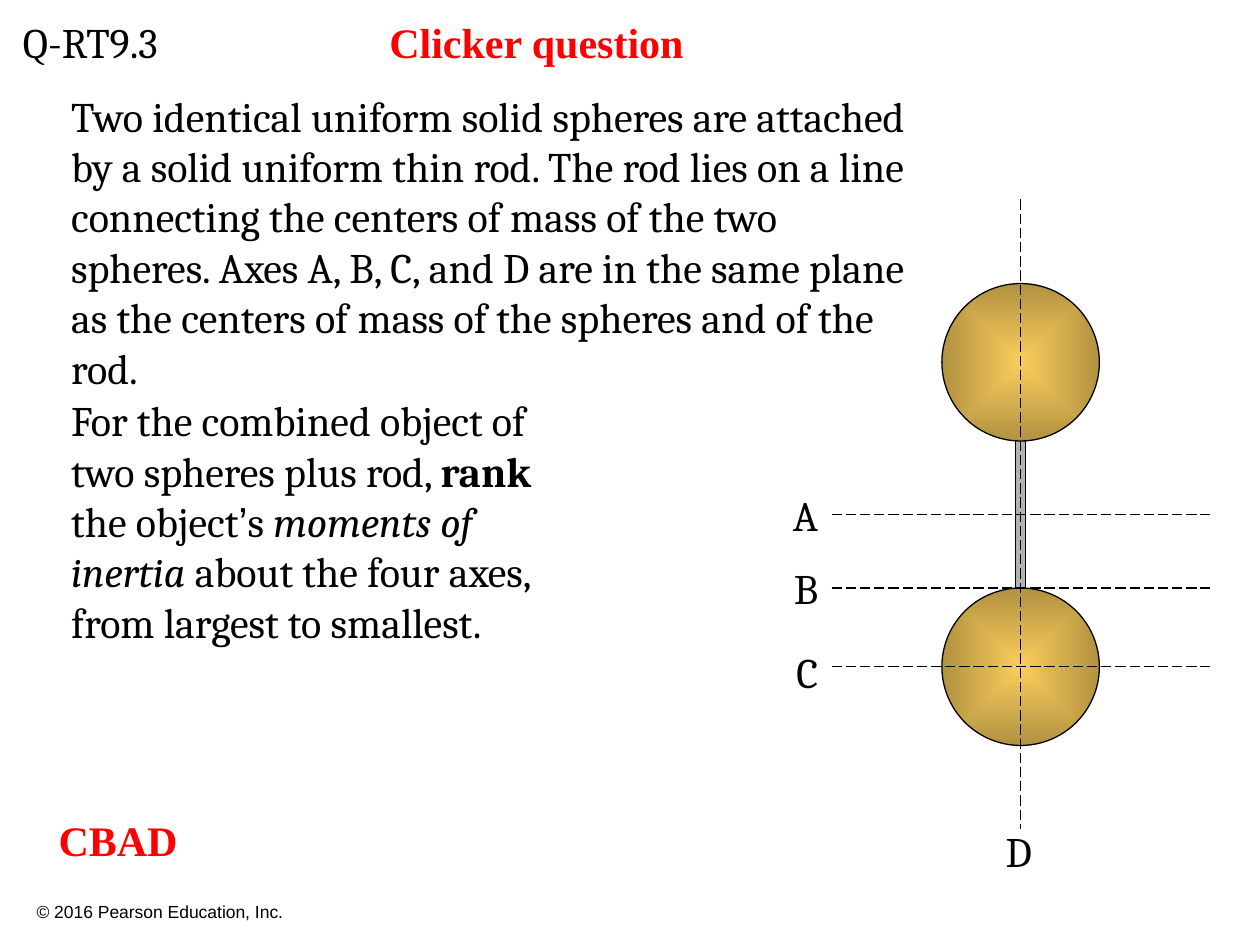
from lxml import etree
from pptx import Presentation
from pptx.dml.color import RGBColor
from pptx.enum.dml import MSO_LINE
from pptx.enum.shapes import MSO_CONNECTOR, MSO_SHAPE
from pptx.enum.text import MSO_AUTO_SIZE, PP_ALIGN
from pptx.oxml import parse_xml
from pptx.oxml.ns import nsdecls, qn
from pptx.util import Inches, Pt

OVAL, RECT = MSO_SHAPE.OVAL, MSO_SHAPE.RECTANGLE
STRAIGHT, LONG_DASH = MSO_CONNECTOR.STRAIGHT, MSO_LINE.LONG_DASH
LEFT, RIGHT = PP_ALIGN.LEFT, PP_ALIGN.RIGHT
FIT_SHAPE = MSO_AUTO_SIZE.SHAPE_TO_FIT_TEXT

COLORS = {"ink": "000000", "accent": "FF0000", "rod": "B2B2B2", "gold": "FACD5C"}
BODY, HEADING, FOOTER = "Cambria", "Times New Roman", "Arial"
COLUMNS, ROWS = 120, 90
CELL = Inches(10) / COLUMNS


def cells(*counts):
    """Turn grid counts into slide lengths."""
    return [round(count * CELL) for count in counts]


def color(name):
    return RGBColor.from_string(COLORS[name])


def add_text(slide, box, runs, font=BODY, size=24, ink="ink", align=LEFT,
             wrap=True, fit=True):
    """Write one paragraph; each run is its text and a dict of font changes."""
    textbox = slide.shapes.add_textbox(*cells(*box))
    frame = textbox.text_frame
    frame.word_wrap = wrap
    if fit:
        frame.auto_size = FIT_SHAPE
    paragraph = frame.paragraphs[0]
    paragraph.alignment = align
    for wording, changes in runs:
        run = paragraph.add_run()
        run.text = wording
        run.font.name = font
        run.font.size = Pt(size)
        run.font.color.rgb = color(ink)
        for attribute, value in changes.items():
            setattr(run.font, attribute, value)


def outline(part):
    part.line.color.rgb = color("ink")
    part.line.width = Pt(0.75)


def add_solid(slide, preset, box):
    solid = slide.shapes.add_shape(preset, *cells(*box))
    solid.shadow.inherit = False
    outline(solid)
    return solid


def add_rod(slide, box):
    rod = add_solid(slide, RECT, box)
    rod.fill.solid()
    rod.fill.fore_color.rgb = color("rod")


def add_sphere(slide, box):
    """Draw a ball shaded from a bright centre to a dark rim."""
    sphere = add_solid(slide, OVAL, box)
    shading = parse_xml(
        f'<a:gradFill {nsdecls("a")} rotWithShape="1"><a:gsLst>'
        f'<a:gs pos="0"><a:srgbClr val="{COLORS["gold"]}"/></a:gs>'
        f'<a:gs pos="100000"><a:srgbClr val="{COLORS["gold"]}">'
        '<a:shade val="46275"/></a:srgbClr></a:gs></a:gsLst>'
        '<a:path path="shape"><a:fillToRect l="50000" t="50000" r="50000" b="50000"/>'
        '</a:path></a:gradFill>')
    sphere._element.spPr.find(qn("a:prstGeom")).addnext(shading)


def add_axis(slide, start, end):
    axis = slide.shapes.add_connector(STRAIGHT, *cells(*start, *end))
    outline(axis)
    axis.line.dash_style = LONG_DASH
    etree.SubElement(axis._element.spPr, qn("a:effectLst"))


def add_header(slide, box):
    left, top, width, height = box
    add_text(slide, (left, top, 21, height), [("Q-RT9.3", {})])
    add_text(slide, (left + 34.9, top, 35, height),
             [("Clicker question", {"bold": True})], HEADING, ink="accent")


def add_question(slide, box):
    left, top, width, height = box
    add_text(slide, (left, top, width, 25.2), [
        ("Two identical uniform solid spheres are attached by a solid uniform thin rod. "
         "The rod lies on a line connecting the centers of mass of the two spheres. "
         "Axes A, B, C, and D are in the same plane as the centers of mass of the "
         "spheres and of the rod.", {})])
    add_text(slide, (left, top + 29, 52.3, height - 29), [
        ("For the combined object of two spheres plus rod, ", {}),
        ("rank", {"bold": True}),
        (" the object", {}),
        ("’", {"name": FOOTER}),
        ("s ", {}),
        ("moments of inertia", {"italic": True}),
        (" about the four axes, from largest to smallest.", {})], fit=False)


def add_dumbbell(slide, box):
    """Draw the two spheres, their rod and the axes, with D on the centre line."""
    left, top, width, height = box
    right, bottom, center = left + width, top + height, left + width / 2
    diameter, rod_width, label_height = 15, 1, 6
    upper, lower = top + 8, top + 37
    sphere_left = center - diameter / 2
    # Each level axis: its row, and the row where its label starts
    levels = {"A": (top + 30, top + 27),
              "B": (lower, top + 34),
              "C": (lower + diameter / 2, top + 42)}

    add_rod(slide, (center - rod_width / 2, upper + 12, rod_width, 20))
    for sphere_top in (upper, lower):
        add_sphere(slide, (sphere_left, sphere_top, diameter, diameter))
    for name, (row, label_top) in levels.items():
        add_axis(slide, (left, row), (right, row))
        add_text(slide, (left - 5.1, label_top, 5, label_height), [(name, {})],
                 align=RIGHT, wrap=False)
    add_axis(slide, (center, top), (center, bottom))
    add_text(slide, (center - 2.6, bottom - 1, 5.2, label_height), [("D", {})],
             wrap=False)


def add_answer(slide, box):
    add_text(slide, box, [("CBAD", {"bold": True})], HEADING, ink="accent")


def add_copyright(slide, box):
    add_text(slide, box, [("© 2016 Pearson Education, Inc.", {})], FOOTER, 10, fit=False)


def main():
    deck = Presentation()
    deck.slide_width, deck.slide_height = cells(COLUMNS, ROWS)
    slide = deck.slides.add_slide(deck.slide_layouts[6])
    add_copyright(slide, (2.3, 85.2, 44, 4.8))
    add_question(slide, (5.6, 8, 83.3, 55))
    add_dumbbell(slide, (79.2, 19, 36, 60))
    add_header(slide, (1, 1, 70, 6))
    add_answer(slide, (4.4, 77, 22.2, 6))
    deck.save("out.pptx")


if __name__ == "__main__":
    main()
